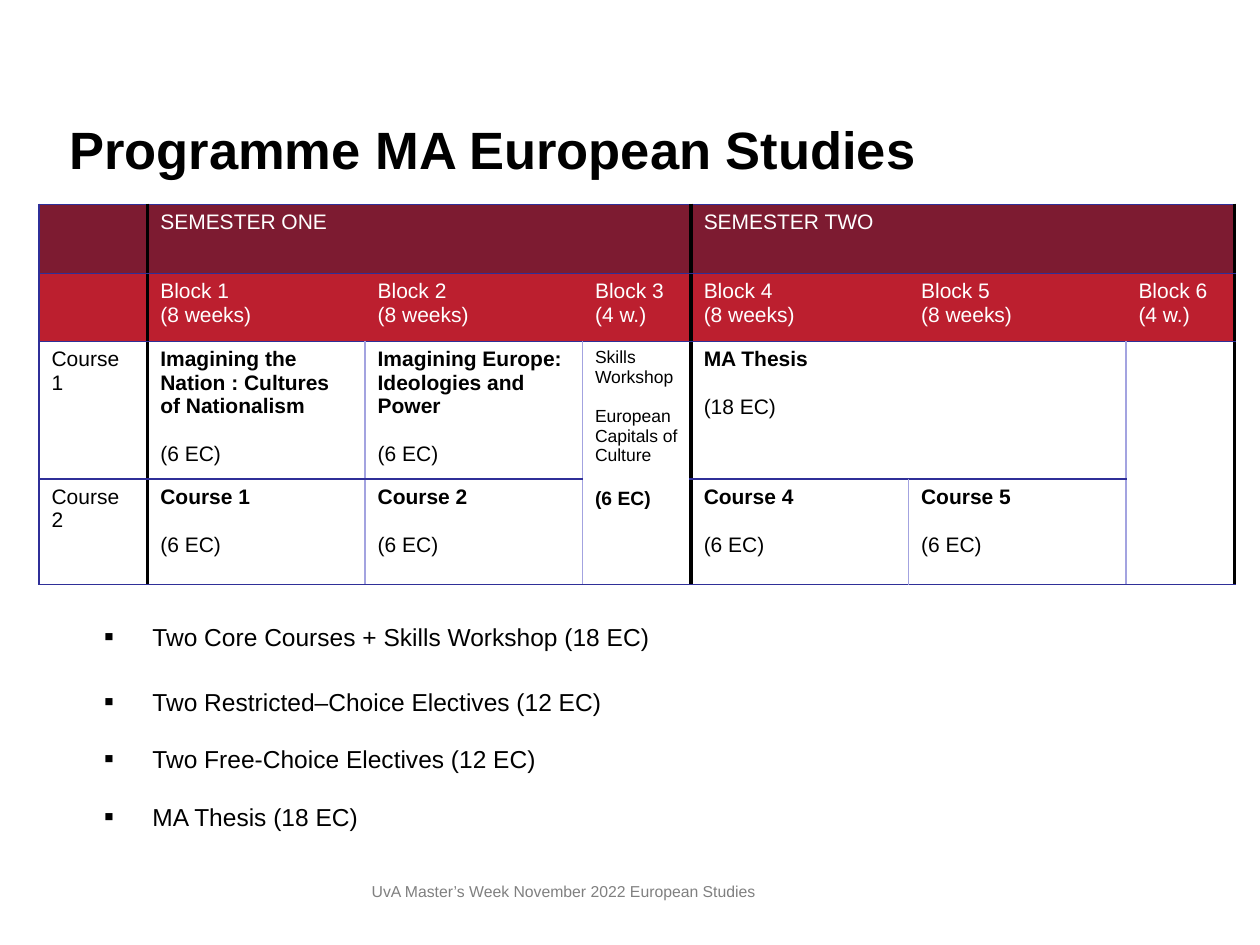
from lxml.etree import SubElement
from pptx import Presentation
from pptx.dml.color import RGBColor
from pptx.enum.text import MSO_ANCHOR
from pptx.oxml.ns import qn
from pptx.util import Inches, Pt

FONT = "Arial"
NAVY = ("2F2F98", 0.75)
BLACK = ("000000", 2.25)
LAVENDER = ("A3A3E0", 1)
HEADER_FILLS = ["7D1B31", "BC1F2F"]
COL_UNITS = [1, 2, 2, 1, 2, 2, 1]
ROW_HEIGHTS = [0.55, 0.54, 1.06, 0.84]
SEMESTERS = {1: "SEMESTER ONE", 4: "SEMESTER TWO"}
SPANS = [((2, 3), (3, 3)), ((2, 4), (2, 5)), ((2, 6), (3, 6))]
SKILLS = [("Skills Workshop", 10, False, 0),
          ("European Capitals of Culture", 10, False, 10),
          ("(6 EC)", 11, True, 11)]
COURSES = {
    (2, 1): ("Imagining the Nation : Cultures of Nationalism", 6),
    (2, 2): ("Imagining Europe: Ideologies and Power", 6),
    (2, 4): ("MA Thesis", 18),
    (3, 1): ("Course 1", 6),
    (3, 2): ("Course 2", 6),
    (3, 4): ("Course 4", 6),
    (3, 5): ("Course 5", 6),
}
BULLETS = [("Two Core Courses + Skills Workshop (18 EC)", 0),
           ("Two Restricted–Choice Electives (12 EC)", 23.7),
           ("Two Free-Choice Electives (12 EC)", 19.4),
           ("MA Thesis (18 EC)", 19.4)]


def rgb(value):
    return RGBColor.from_string(value)


def set_font(p, size, color="000000", bold=False):
    p.font.name, p.font.size, p.font.bold = FONT, Pt(size), bold
    p.font.color.rgb = rgb(color)


def add_box(s, box, top=0.05):
    tf = s.shapes.add_textbox(*map(Inches, box)).text_frame
    tf.word_wrap = True
    tf.vertical_anchor = MSO_ANCHOR.TOP
    tf.margin_left = tf.margin_right = 0
    tf.margin_top, tf.margin_bottom = Inches(top), Inches(0.05)
    return tf


def add_line(s, box, text, size, color="000000", bold=False):
    p = add_box(s, box).paragraphs[0]
    p.text = text
    set_font(p, size, color, bold)


def fill_cell(cell, lines, color="000000"):
    tf = cell.text_frame
    for i, (text, size, bold, gap) in enumerate(lines):
        p = tf.paragraphs[0] if i == 0 else tf.add_paragraph()
        p.text = text
        if gap:
            p.space_before = Pt(gap * 1.15)
        set_font(p, size, color, bold)


def vertical_edge(row, i):
    if i == 0:
        return NAVY
    if i in (1, 4, 7):
        return BLACK
    return LAVENDER if row > 1 and (row, i) != (2, 5) else None


def horizontal_edge(col, i):
    return None if i == 3 and col in (3, 6) else NAVY


def set_borders(cell, row, col):
    last_row = row + (cell.span_height if cell.is_merge_origin else 1)
    last_col = col + (cell.span_width if cell.is_merge_origin else 1)
    edges = {"L": vertical_edge(row, col), "R": vertical_edge(row, last_col),
             "T": horizontal_edge(col, row), "B": horizontal_edge(col, last_row)}
    tc_pr = cell._tc.get_or_add_tcPr()
    for side, edge in edges.items():
        ln = SubElement(tc_pr, qn("a:ln" + side))
        if edge:
            color, width = edge
            ln.set("w", str(Pt(width)))
            SubElement(SubElement(ln, qn("a:solidFill")), qn("a:srgbClr")).set("val", color)
        else:
            SubElement(ln, qn("a:noFill"))


def cell_lines(row, col):
    if row == 0:
        return [(SEMESTERS[col], 12, False, 0)] if col in SEMESTERS else []
    if col == 0:
        return [(f"Course {row - 1}", 12, False, 0)] if row > 1 else []
    if row == 1:
        length = "(8 weeks)" if COL_UNITS[col] == 2 else "(4 w.)"
        return [(f"Block {col}", 12, False, 0), (length, 12, False, 0)]
    if (row, col) == (2, 3):
        return SKILLS
    if (row, col) in COURSES:
        name, credits = COURSES[row, col]
        return [(name, 12, True, 0), (f"({credits} EC)", 12, False, 12)]
    return []


def add_programme(s, box):
    rows, cols = len(ROW_HEIGHTS), len(COL_UNITS)
    table = s.shapes.add_table(rows, cols, *map(Inches, box)).table
    table.first_row = table.horz_banding = False
    for column, units in zip(table.columns, COL_UNITS):
        column.width = Inches(box[2] * units / sum(COL_UNITS))
    for row, height in zip(table.rows, ROW_HEIGHTS):
        row.height = Inches(height)
    for start, end in SPANS:
        table.cell(*start).merge(table.cell(*end))
    for row in range(rows):
        for col in range(cols):
            cell = table.cell(row, col)
            set_borders(cell, row, col)
            if row < len(HEADER_FILLS):
                cell.fill.solid()
                cell.fill.fore_color.rgb = rgb(HEADER_FILLS[row])
            else:
                cell.fill.background()
            fill_cell(cell, cell_lines(row, col), "FFFFFF" if row < 2 else "000000")


def add_bullets(s, box):
    tf = add_box(s, box, 0.27)
    for i, (text, gap) in enumerate(BULLETS):
        p = tf.paragraphs[0] if i == 0 else tf.add_paragraph()
        p.text = text
        p.line_spacing = 0.8
        if gap:
            p.space_before = Pt(gap)
        p_pr = p._p.get_or_add_pPr()
        p_pr.set("marL", str(Inches(0.38)))
        p_pr.set("indent", str(-Inches(0.38)))
        SubElement(p_pr, qn("a:buSzPct")).set("val", "60000")
        SubElement(p_pr, qn("a:buFont")).set("typeface", FONT)
        SubElement(p_pr, qn("a:buChar")).set("char", "■")
        set_font(p, 14)


def main():
    prs = Presentation()
    prs.slide_width, prs.slide_height = Inches(10), Inches(7.5)
    s = prs.slides.add_slide(prs.slide_layouts[6])
    add_line(s, (0.55, 0.88, 8.8, 1.11), "Programme MA European Studies", 30, bold=True)
    add_programme(s, (0.31, 1.62, 9.49, 2.99))
    add_line(s, (2.95, 6.95, 5.05, 0.4),
             "UvA Master’s Week November 2022 European Studies", 9, "808080")
    add_bullets(s, (0.83, 4.71, 8.11, 2.07))
    prs.save("out.pptx")


if __name__ == "__main__":
    main()
